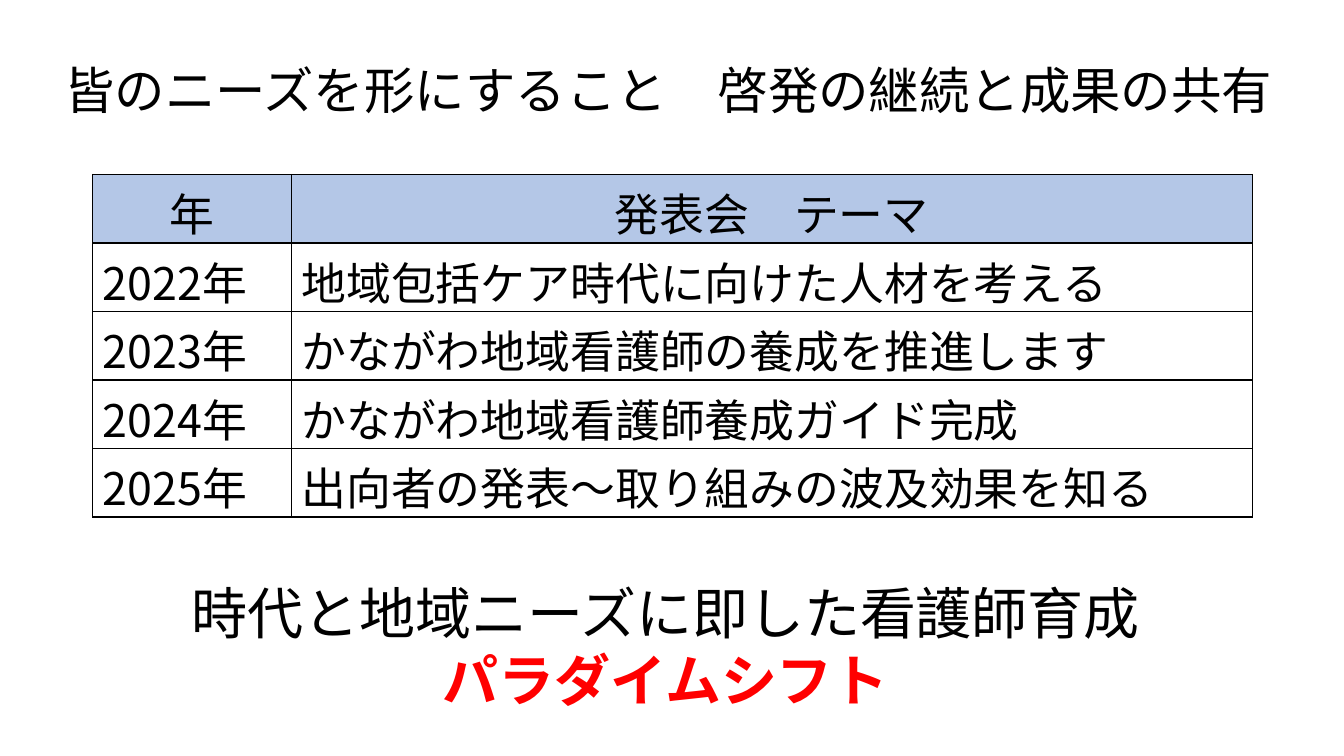
from lxml.etree import SubElement
from pptx import Presentation
from pptx.dml.color import RGBColor
from pptx.enum.text import MSO_ANCHOR, MSO_AUTO_SIZE, PP_ALIGN
from pptx.oxml.ns import qn
from pptx.util import Inches, Pt

FONT = "Noto Sans CJK JP"
COLORS = {"text": "000000", "accent": "FF0000", "header": "B4C7E7", "border": "000000"}
COLUMN_WIDTHS = [1.97, 9.53]
ROW_HEIGHT = 0.68
THEMES = [
    ("年", "発表会　テーマ"),
    ("2022年", "地域包括ケア時代に向けた人材を考える"),
    ("2023年", "かながわ地域看護師の養成を推進します"),
    ("2024年", "かながわ地域看護師養成ガイド完成"),
    ("2025年", "出向者の発表～取り組みの波及効果を知る"),
]


def color(name):
    return RGBColor.from_string(COLORS[name])


def add_span(para, text, size, tone="text", bold=False):
    span = para.add_run()
    span.text = text
    span.font.size = Pt(size)
    span.font.bold = bold
    span.font.color.rgb = color(tone)
    span.font.name = FONT
    SubElement(span.font._element, qn("a:ea"), typeface=FONT)


def add_text_frame(page, left, top, width, height):
    box = page.shapes.add_textbox(Inches(left), Inches(top), Inches(width), Inches(height))
    return box.text_frame


def add_title(page, text):
    frame = add_text_frame(page, 0.54, 0.52, 12.57, 0.81)
    frame.word_wrap = True
    frame.vertical_anchor = MSO_ANCHOR.MIDDLE
    para = frame.paragraphs[0]
    para.line_spacing = 0.9
    add_span(para, text, 36)


def add_borders(cell):
    """Draw the four cell edges; they must precede the cell's fill."""
    properties = cell._tc.get_or_add_tcPr()
    for edge in ("lnL", "lnR", "lnT", "lnB"):
        line = SubElement(properties, qn(f"a:{edge}"), w=str(Pt(1)))
        fill = SubElement(line, qn("a:solidFill"))
        SubElement(fill, qn("a:srgbClr"), val=COLORS["border"])


def add_theme_table(page):
    frame = page.shapes.add_table(
        len(THEMES), len(COLUMN_WIDTHS), Inches(0.92), Inches(1.73),
        Inches(sum(COLUMN_WIDTHS)), Inches(ROW_HEIGHT * len(THEMES)))
    table = frame.table
    table.horz_banding = False
    for column, width in zip(table.columns, COLUMN_WIDTHS):
        column.width = Inches(width)
    for row_index, texts in enumerate(THEMES):
        is_header = row_index == 0
        table.rows[row_index].height = Inches(ROW_HEIGHT)
        for column_index, text in enumerate(texts):
            cell = table.cell(row_index, column_index)
            add_borders(cell)
            cell.vertical_anchor = MSO_ANCHOR.MIDDLE
            if is_header:
                cell.fill.solid()
                cell.fill.fore_color.rgb = color("header")
            else:
                cell.fill.background()
            para = cell.text_frame.paragraphs[0]
            para.alignment = PP_ALIGN.CENTER if is_header else PP_ALIGN.LEFT
            add_span(para, text, 32)


def add_conclusion(page, statement, keyword):
    frame = add_text_frame(page, 1.8, 5.69, 9.74, 1.45)
    frame.word_wrap = False
    frame.auto_size = MSO_AUTO_SIZE.SHAPE_TO_FIT_TEXT
    add_span(frame.paragraphs[0], statement, 40)
    para = frame.add_paragraph()
    para.alignment = PP_ALIGN.CENTER
    add_span(para, keyword, 40, "accent", bold=True)


def main():
    deck = Presentation()
    deck.slide_width, deck.slide_height = Inches(13.33), Inches(7.5)
    page = deck.slides.add_slide(deck.slide_layouts[6])
    add_title(page, "皆のニーズを形にすること　啓発の継続と成果の共有")
    add_theme_table(page)
    add_conclusion(page, "時代と地域ニーズに即した看護師育成", "パラダイムシフト")
    deck.save("out.pptx")


if __name__ == "__main__":
    main()
